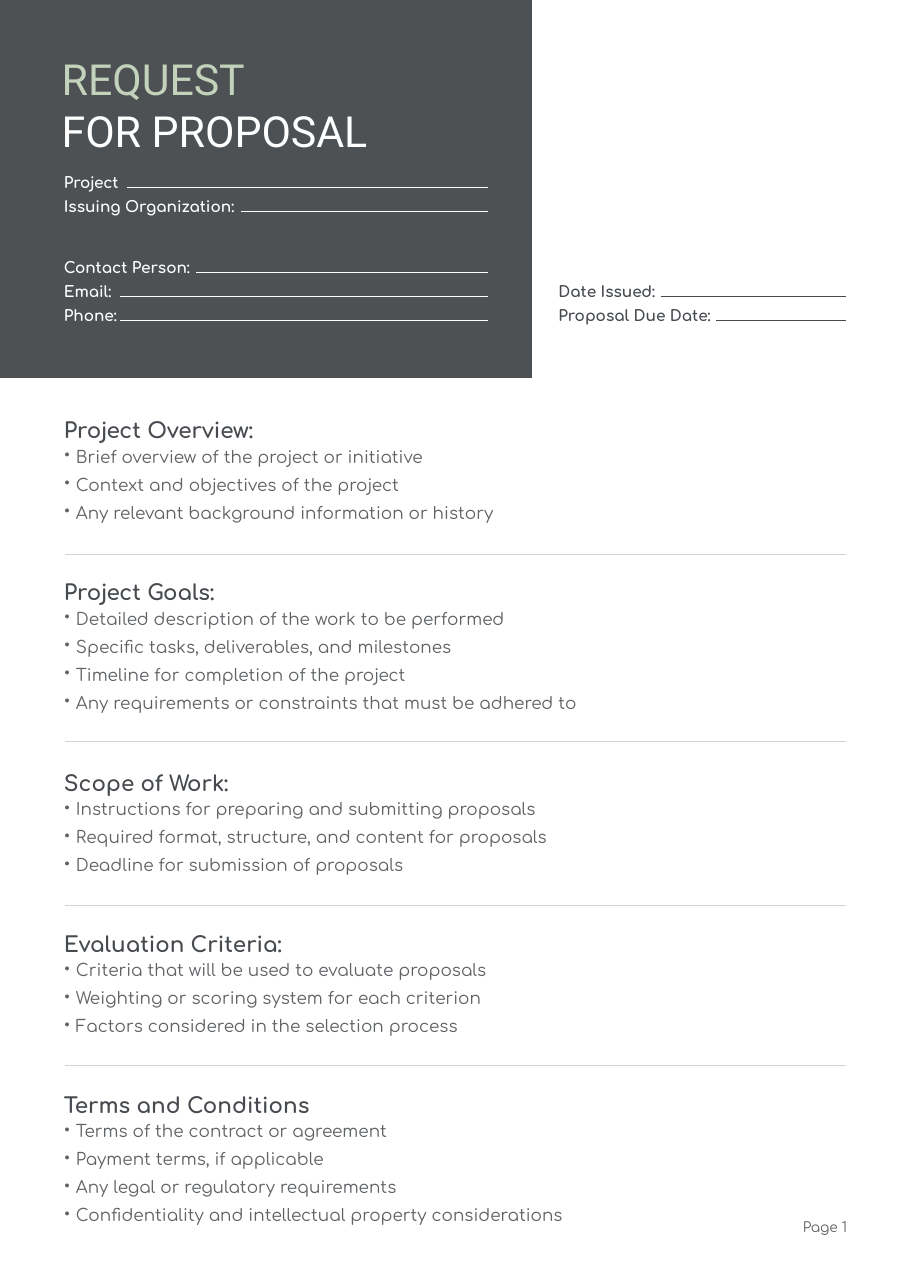
import pptx
import pptx.util
import pptx.dml.color
import pptx.enum.shapes
import pptx.enum.text
import lxml.etree
from pptx.oxml.ns import qn

Inches, Pt = pptx.util.Inches, pptx.util.Pt
ALIGN = pptx.enum.text.PP_ALIGN

SLATE, INK, BODY = "4D5154", "474B4F", "5F6265"
WHITE, SAGE, RULE = "FFFFFF", "C3D2BA", "D2D2D3"
LEFT, RIGHT = 0.58, 7.68
BANNER_W, BANNER_H = 4.83, 3.43

TITLE = [("REQUEST", SAGE), ("FOR PROPOSAL", WHITE)]

# colour, left edge, line end, then (label, top, line start)
FIELD_GROUPS = [
    (WHITE, LEFT, 4.43, [
        ("Project", 1.57, 1.15),
        ("Issuing Organization:", 1.79, 2.19),
        ("Contact Person:", 2.34, 1.78),
        ("Email:", 2.56, 1.09),
        ("Phone:", 2.78, 1.09),
    ]),
    (INK, 5.07, RIGHT, [
        ("Date Issued:", 2.56, 6.0),
        ("Proposal Due Date:", 2.78, 6.5),
    ]),
]

# heading, top, items
SECTIONS = [
    ("Project Overview:", 3.79, [
        "Brief overview of the project or initiative",
        "Context and objectives of the project",
        "Any relevant background information or history",
    ]),
    ("Project Goals:", 5.26, [
        "Detailed description of the work to be performed",
        "Specific tasks, deliverables, and milestones",
        "Timeline for completion of the project",
        "Any requirements or constraints that must be adhered to",
    ]),
    ("Scope of Work:", 6.99, [
        "Instructions for preparing and submitting proposals",
        "Required format, structure, and content for proposals",
        "Deadline for submission of proposals",
    ]),
    ("Evaluation Criteria:", 8.45, [
        "Criteria that will be used to evaluate proposals",
        "Weighting or scoring system for each criterion",
        "Factors considered in the selection process",
    ]),
    ("Terms and Conditions", 9.91, [
        "Terms of the contract or agreement",
        "Payment terms, if applicable",
        "Any legal or regulatory requirements",
        "Confidentiality and intellectual property considerations",
    ]),
]
DIVIDERS = [5.03, 6.73, 8.22, 9.67]
ITEM_PITCH = 18.3  # points
ITEM_INDENT = 0.11

presentation = pptx.Presentation()
presentation.slide_width, presentation.slide_height = Inches(8.27), Inches(11.69)
slide = presentation.slides.add_slide(presentation.slide_layouts[6])


def rgb(hex_colour):
    return pptx.dml.color.RGBColor.from_string(hex_colour)


def add_text(left, top, width, height, lines, size, colour,
             bold=False, font="Comfortaa", align=ALIGN.LEFT):
    box = slide.shapes.add_textbox(Inches(left), Inches(top), Inches(width), Inches(height))
    frame = box.text_frame
    frame.margin_left = frame.margin_right = frame.margin_top = frame.margin_bottom = 0
    frame.word_wrap = True
    frame.text = "\n".join(lines)
    for paragraph in frame.paragraphs:
        paragraph.alignment = align
        for run in paragraph.runs:
            run.font.name, run.font.size, run.font.bold = font, Pt(size), bold
            run.font.color.rgb = rgb(colour)
    return frame


def add_rule(start, end, y, colour):
    rule = slide.shapes.add_connector(
        pptx.enum.shapes.MSO_CONNECTOR.STRAIGHT,
        Inches(start), Inches(y), Inches(end), Inches(y))
    rule.line.color.rgb = rgb(colour)
    rule.line.width = Pt(0.75)
    lxml.etree.SubElement(rule._element.spPr, qn("a:effectLst"))


def add_bullets(frame):
    for paragraph in frame.paragraphs:
        paragraph.line_spacing = Pt(ITEM_PITCH)
        properties = paragraph._p.get_or_add_pPr()
        properties.set("marL", str(Inches(ITEM_INDENT)))
        properties.set("indent", str(-Inches(ITEM_INDENT)))
        lxml.etree.SubElement(properties, qn("a:buFont"), typeface="Comfortaa")
        lxml.etree.SubElement(properties, qn("a:buChar"), char="•")


banner = slide.shapes.add_shape(pptx.enum.shapes.MSO_SHAPE.RECTANGLE,
                                0, 0, Inches(BANNER_W), Inches(BANNER_H))
banner.shadow.inherit = False
banner.fill.solid()
banner.fill.fore_color.rgb = rgb(SLATE)
banner.line.fill.background()

title = add_text(0.56, 0.48, 3.85, 0.94, [words for words, _ in TITLE], 28, WHITE, font="Roboto")
for paragraph, (_, colour) in zip(title.paragraphs, TITLE):
    paragraph.runs[0].font.color.rgb = rgb(colour)

for colour, left, line_end, fields in FIELD_GROUPS:
    for label, top, line_start in fields:
        add_text(left, top, line_start - left, 0.17, [label], 10, colour, bold=True)
        add_rule(line_start, line_end, top + 0.13, colour)

for heading, top, items in SECTIONS:
    add_text(LEFT, top, 4.88, 0.24, [heading], 14, INK, bold=True)
    add_bullets(add_text(LEFT, top + 0.19, 5.4, len(items) * ITEM_PITCH / 72, items, 11, BODY))

for y in DIVIDERS:
    add_rule(0.59, RIGHT, y, RULE)

add_text(6.84, 11.06, 0.85, 0.15, ["Page 1"], 9, BODY, align=ALIGN.RIGHT)

presentation.save("out.pptx")
